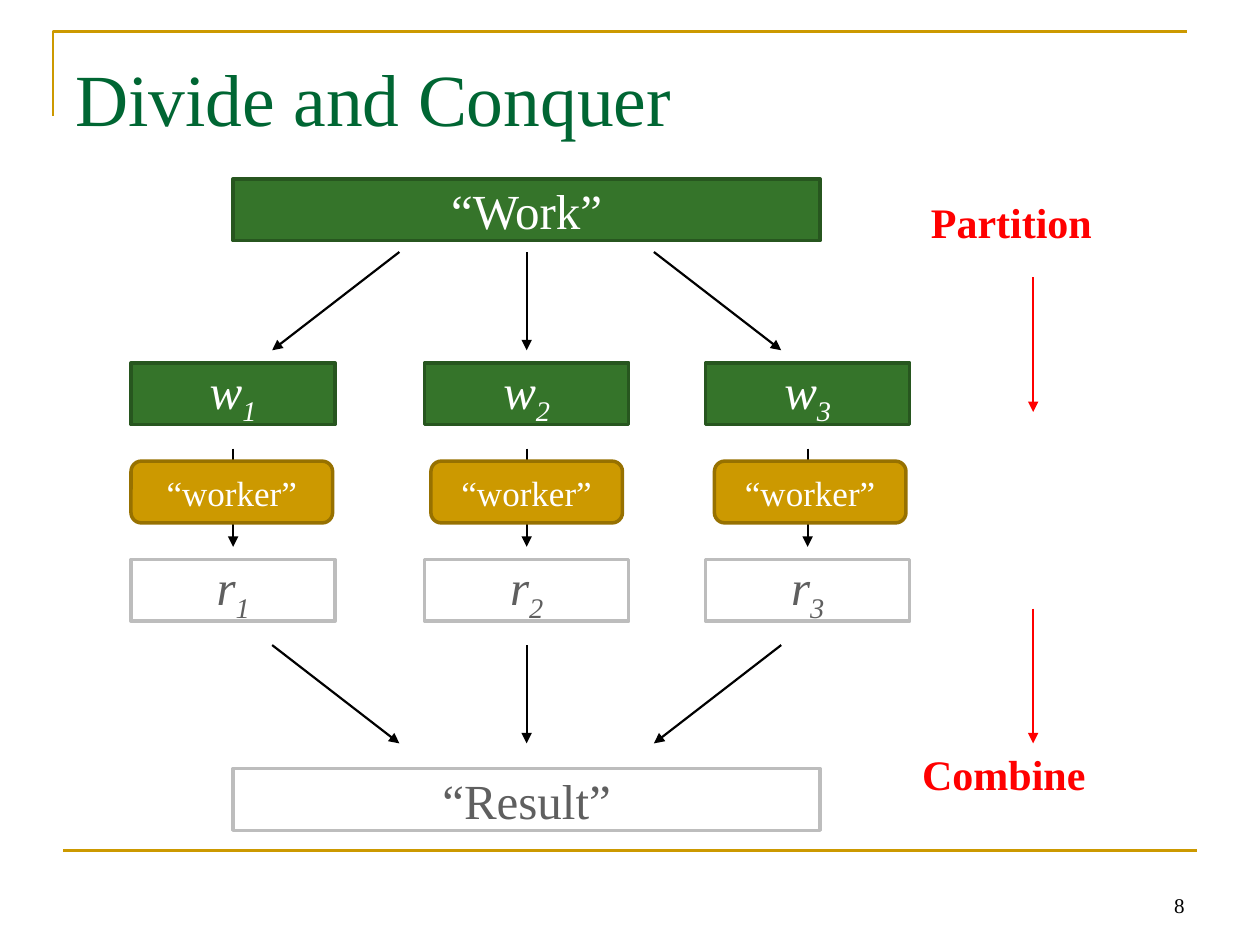
from dataclasses import dataclass

from lxml import etree
from pptx import Presentation
from pptx.dml.color import RGBColor
from pptx.enum import shapes, text
from pptx.oxml import ns
from pptx.util import Inches, Pt

FONT = "Times New Roman"
COLORS = {
    "gold": "CC9900", "gold_edge": "977100",
    "green": "35742A", "green_edge": "27561F", "title": "006633",
    "white": "FFFFFF", "silver": "BDBDBD", "gray": "5F5F5F",
    "black": "000000", "red": "FF0000",
}


@dataclass
class Style:
    fill: str
    edge: str
    ink: str
    size: float = 28
    kind: shapes.MSO_SHAPE = shapes.MSO_SHAPE.RECTANGLE


@dataclass
class Branch:
    left: float
    worker_left: float
    worker_width: float
    outer_x: float
    inner_x: float

    @property
    def center(self) -> float:
        return self.left + PART_W / 2


WORK = Style("green", "green_edge", "white")
RESULT = Style("white", "silver", "gray")
WORKER = Style("gold", "gold_edge", "white", 20, shapes.MSO_SHAPE.ROUNDED_RECTANGLE)

BOX_H, PART_W = 0.49, 1.62
BRANCHES = [
    Branch(1.04, 1.04, 1.6, 2.16, 3.17),
    Branch(3.37, 3.42, 1.52, 4.18, 4.18),
    Branch(5.6, 5.67, 1.52, 6.2, 5.19),
]


def rgb(name: str) -> RGBColor:
    return RGBColor.from_string(COLORS[name])


def write(tf, content: str, *, size: float, color: str, sub: str = "",
          bold: bool = False, italic: bool = False,
          align=text.PP_ALIGN.LEFT) -> None:
    p = tf.paragraphs[0]
    p.alignment = align
    for part in filter(None, (content, sub)):
        r = p.add_run()
        r.text = part
        r.font.name, r.font.size = FONT, Pt(size)
        r.font.bold, r.font.italic = bold, italic
        r.font.color.rgb = rgb(color)
    if sub:
        r.font._element.set("baseline", "-25000")


def add_box(s, style: Style, left: float, top: float, width: float,
            content: str, sub: str = "") -> None:
    sp = s.shapes.add_shape(style.kind, Inches(left), Inches(top),
                            Inches(width), Inches(BOX_H))
    sp.shadow.inherit = False
    sp.fill.solid()
    sp.fill.fore_color.rgb = rgb(style.fill)
    sp.line.color.rgb = rgb(style.edge)
    sp.line.width = Pt(2)
    tf = sp.text_frame
    tf.word_wrap = True
    tf.vertical_anchor = text.MSO_ANCHOR.MIDDLE
    write(tf, content, sub=sub, size=style.size, color=style.ink,
          italic=bool(sub), align=text.PP_ALIGN.CENTER)


def add_line(s, x1: float, y1: float, x2: float, y2: float, *,
             color: str = "black", width: float = 1.25, arrow: bool = True) -> None:
    sp = s.shapes.add_connector(shapes.MSO_CONNECTOR.STRAIGHT, Inches(x1),
                                Inches(y1), Inches(x2), Inches(y2))
    sp.line.color.rgb = rgb(color)
    sp.line.width = Pt(width)
    if arrow:
        ln = sp.line._get_or_add_ln()
        etree.SubElement(ln, ns.qn("a:tailEnd"), type="triangle")
    etree.SubElement(sp._element.spPr, ns.qn("a:effectLst"))


def add_text(s, left: float, top: float, width: float, height: float,
             content: str, *, wrap: bool = True, inset: float = 0.05,
             anchor=text.MSO_ANCHOR.TOP, **fmt) -> None:
    sp = s.shapes.add_textbox(Inches(left), Inches(top), Inches(width), Inches(height))
    tf = sp.text_frame
    tf.word_wrap = wrap
    tf.margin_top = Inches(inset)
    tf.vertical_anchor = anchor
    if not wrap:
        tf.auto_size = text.MSO_AUTO_SIZE.SHAPE_TO_FIT_TEXT
    write(tf, content, **fmt)


def add_frame(s) -> None:
    fb = s.shapes.build_freeform(Inches(0.42), Inches(0.92))
    fb.add_line_segments([(Inches(0.42), Inches(0.25)),
                          (Inches(9.42), Inches(0.25))], close=False)
    sp = fb.convert_to_shape()
    sp.shadow.inherit = False
    sp.fill.background()
    sp.line.color.rgb = rgb("gold")
    sp.line.width = Pt(1.5)
    add_line(s, 0.5, 6.75, 9.5, 6.75, color="gold", width=1.5, arrow=False)


def main() -> None:
    prs = Presentation()
    prs.slide_width, prs.slide_height = Inches(10), Inches(7.5)
    s = prs.slides.add_slide(prs.slide_layouts[6])

    add_frame(s)
    add_text(s, 0.5, 0.3, 9, 1.25, "Divide and Conquer", inset=0.12,
             size=42, color="title")

    add_box(s, WORK, 1.85, 1.42, 4.66, "“Work”")
    for n, b in enumerate(BRANCHES, 1):
        add_line(s, b.inner_x, 2, b.outer_x, 2.78)
        add_box(s, WORK, b.left, 2.88, PART_W, "w", str(n))
        add_line(s, b.center, 3.56, b.center, 4.34)
        add_box(s, WORKER, b.worker_left, 3.66, b.worker_width, "“worker”")
        add_box(s, RESULT, b.left, 4.44, PART_W, "r", str(n))
        add_line(s, b.outer_x, 5.12, b.inner_x, 5.9)
    add_box(s, RESULT, 1.85, 6.1, 4.66, "“Result”")

    for content, left, top, width, arrow_top in (
        ("Partition", 7.29, 1.51, 1.49, 2.2),
        ("Combine", 7.22, 5.89, 1.51, 4.83),
    ):
        add_text(s, left, top, width, 0.5, content, wrap=False,
                 size=24, color="red", bold=True)
        add_line(s, 8.2, arrow_top, 8.2, arrow_top + 1.07, color="red", width=1.5)

    add_text(s, 7.17, 6.83, 2.33, 0.5, "8", anchor=text.MSO_ANCHOR.BOTTOM,
             size=12, color="black", align=text.PP_ALIGN.RIGHT)
    prs.save("out.pptx")


if __name__ == "__main__":
    main()
